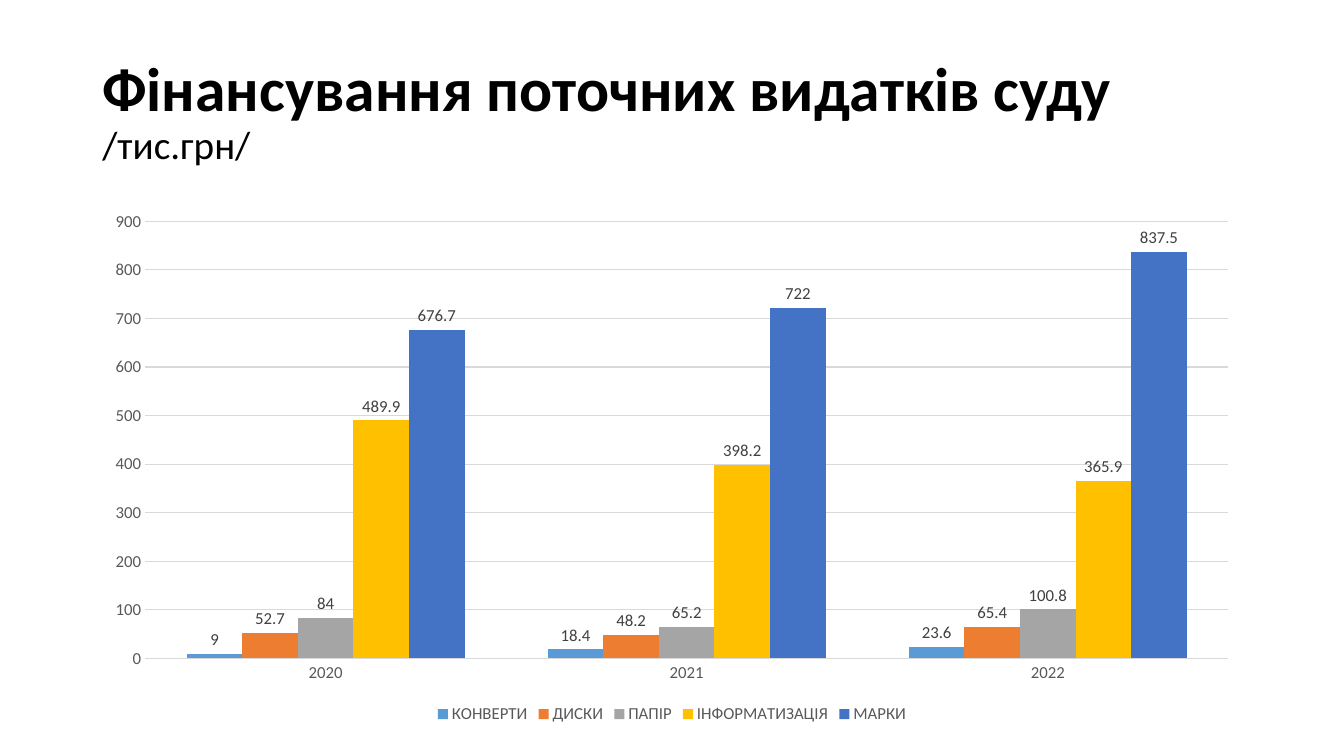
from pptx import Presentation
from pptx import util as u
from pptx.chart.data import CategoryChartData
from pptx.dml.color import RGBColor
from pptx.enum import chart as ch, text

FONT = "Calibri"
YEARS = ["2020", "2021", "2022"]
EXPENSES = [
    ("КОНВЕРТИ", "5B9BD5", (9, 18.4, 23.6)),
    ("ДИСКИ", "ED7D31", (52.7, 48.2, 65.4)),
    ("ПАПІР", "A5A5A5", (84, 65.2, 100.8)),
    ("ІНФОРМАТИЗАЦІЯ", "FFC000", (489.9, 398.2, 365.9)),
    ("МАРКИ", "4472C4", (676.7, 722, 837.5)),
]


def rgb(value):
    """Turn a hex string into a colour."""
    return RGBColor.from_string(value)


def style_font(font, size, color, bold=False):
    """Set the face, size, colour and weight of a font."""
    font.name = FONT
    font.size = u.Pt(size)
    font.bold = bold
    font.color.rgb = rgb(color)


def add_heading(slide, left, top, width, height):
    """Place the heading and its unit of measure in the given box."""
    heading = slide.shapes.add_textbox(left, top, width, height).text_frame
    heading.word_wrap = True
    heading.vertical_anchor = text.MSO_ANCHOR.MIDDLE
    line = heading.paragraphs[0]
    line.line_spacing = 0.9
    for wording, size, bold in (
        ("Фінансування поточних видатків суду ", 44, True),
        ("/тис.грн/", 28, False),
    ):
        run = line.add_run()
        run.text = wording
        style_font(run.font, size, "000000", bold)


def style_axis(axis):
    """Give an axis its font and hide its line and ticks."""
    axis.major_tick_mark = axis.minor_tick_mark = ch.XL_TICK_MARK.NONE
    axis.format.line.fill.background()
    style_font(axis.tick_labels.font, 12, "595959")


def add_expense_chart(slide, left, top, width, height):
    """Place the clustered columns of yearly expenses in the given box."""
    data = CategoryChartData()
    data.categories = YEARS
    for name, _, amounts in EXPENSES:
        data.add_series(name, amounts)
    expenses = slide.shapes.add_chart(
        ch.XL_CHART_TYPE.COLUMN_CLUSTERED, left, top, width, height, data
    ).chart
    style_font(expenses.font, 10, "000000")
    expenses.has_title = False

    expenses.has_legend = True
    expenses.legend.position = ch.XL_LEGEND_POSITION.BOTTOM
    expenses.legend.include_in_layout = False
    style_font(expenses.legend.font, 12, "595959")

    style_axis(expenses.category_axis)
    amount_axis = expenses.value_axis
    style_axis(amount_axis)
    amount_axis.minimum_scale, amount_axis.maximum_scale = 0, 900
    amount_axis.major_unit = 100
    grid = amount_axis.major_gridlines.format.line
    grid.color.rgb = rgb("D9D9D9")
    grid.width = u.Pt(0.75)

    columns = expenses.plots[0]
    columns.gap_width = 150
    columns.overlap = 0
    columns.vary_by_categories = False
    for series, (_, color, _) in zip(columns.series, EXPENSES):
        series.format.fill.solid()
        series.format.fill.fore_color.rgb = rgb(color)
        series.invert_if_negative = False
        amounts = series.data_labels
        amounts.show_value = True
        amounts.position = ch.XL_LABEL_POSITION.OUTSIDE_END
        style_font(amounts.font, 12, "404040")


def main():
    """Build the slide of current court expenses and save it."""
    deck = Presentation()
    deck.slide_width, deck.slide_height = u.Cm(33.87), u.Cm(19.05)
    slide = deck.slides.add_slide(deck.slide_layouts[6])
    margin = u.Cm(2.33)
    width = deck.slide_width - 2 * margin
    add_heading(slide, margin, u.Cm(1.01), width, u.Cm(3.68))
    add_expense_chart(slide, margin, u.Cm(5.06), width, u.Cm(13.29))
    deck.save("out.pptx")


if __name__ == "__main__":
    main()
